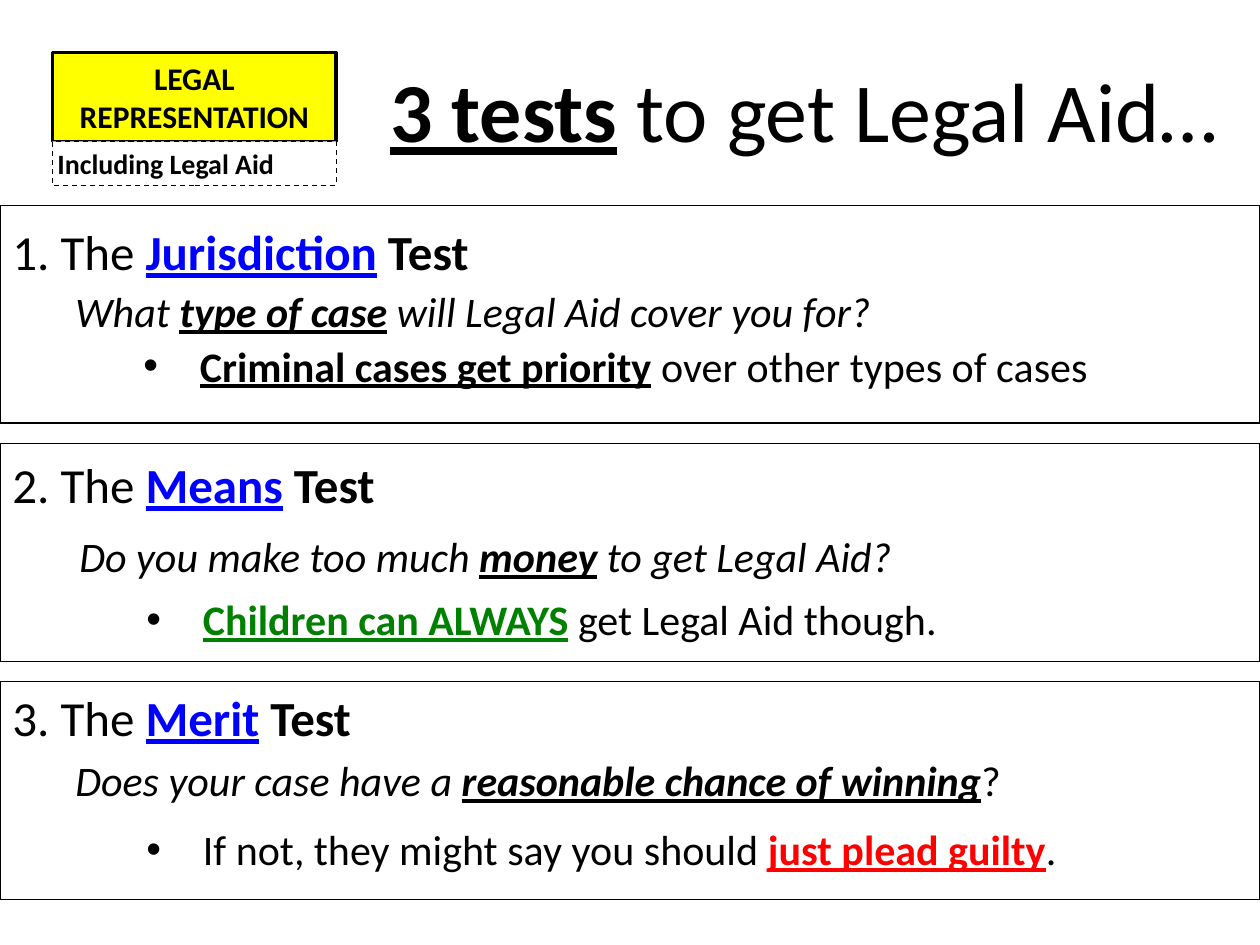
from lxml import etree
from pptx import Presentation
from pptx.dml.color import RGBColor
from pptx.enum import dml, shapes, text
from pptx.oxml.ns import qn
from pptx.util import Cm, Pt

BLACK, BLUE, GREEN, RED = "000000", "0000FF", "008000", "FF0000"
WIDE = 25.4

# Each test: heading word, then (left, top, runs) for question and answer.
# A run is (text, style letters, optional colour).
TESTS = [
    ("Jurisdiction",
     (1.27, 5.64, [("What ", "i"), ("type of case", "biu"), (" ", ""),
                   ("will Legal Aid cover you for?", "i")]),
     (2.64, 6.73, [(" ", ""), ("Criminal cases get priority", "bu"),
                   (" over other types of cases", "")])),
    ("Means",
     (1.35, 10.57, [("Do you make too much ", "i"), ("money", "biu"), (" ", ""),
                    ("to get Legal Aid?", "i")]),
     (2.7, 11.84, [(" ", ""), ("Children can ALWAYS", "bu", GREEN),
                   (" get Legal Aid though.", "")])),
    ("Merit",
     (1.27, 15.09, [("Does your case have a ", "i"),
                    ("reasonable chance of winning", "biu"), ("?", "")]),
     (2.7, 16.48, [(" If not, they might say you should ", ""),
                   ("just plead guilty", "bu", RED), (".", "")])),
]


def tint(code):
    return RGBColor.from_string(code)


def write(shape, runs, size, wrap=True, inset=None):
    """Fill the first paragraph of a shape with styled runs."""
    frame = shape.text_frame
    form = {"word_wrap": wrap, "vertical_anchor": text.MSO_ANCHOR.TOP}
    if inset is not None:
        for side in ("left", "right", "top", "bottom"):
            form["margin_" + side] = Cm(inset)
    for name, value in form.items():
        setattr(frame, name, value)
    para = frame.paragraphs[0]
    for words, style, *color in runs:
        run = para.add_run()
        run.text = words
        look = {"name": "Calibri", "size": Pt(size), "bold": "b" in style,
                "italic": "i" in style, "underline": "u" in style}
        for name, value in look.items():
            setattr(run.font, name, value)
        run.font.color.rgb = tint(color[0] if color else BLACK)
    return para


def label(slide, box, runs, size, wrap=True):
    shape = slide.shapes.add_textbox(*map(Cm, box))
    return write(shape, runs, size, wrap)


def bullet(para):
    props = para._p.get_or_add_pPr()
    props.set("marL", str(Cm(0.95)))
    props.set("indent", str(Cm(-0.95)))
    etree.SubElement(props, qn("a:buFont")).set("typeface", "Arial")
    etree.SubElement(props, qn("a:buChar")).set("char", "•")


def panel(slide, box, fill=None, width=0.75, dash=None):
    shape = slide.shapes.add_shape(shapes.MSO_SHAPE.RECTANGLE, *map(Cm, box))
    shape.shadow.inherit = False
    if fill:
        shape.fill.solid()
        shape.fill.fore_color.rgb = tint(fill)
    else:
        shape.fill.background()
    shape.line.color.rgb = tint(BLACK)
    shape.line.width = Pt(width)
    if dash:
        shape.line.dash_style = dash
    return shape


def header(slide):
    badge = panel(slide, (1.06, 1.06, 5.72, 1.79), "FFFF00", 2)
    para = write(badge, [("LEGAL REPRESENTATION", "b")], 18)
    para.alignment = text.PP_ALIGN.CENTER
    note = panel(slide, (1.06, 2.85, 5.72, 0.89), "FFFFFF",
                 dash=dml.MSO_LINE.DASH)
    para = write(note, [("Including Legal Aid", "b")], 16, inset=0.1)
    para.alignment = text.PP_ALIGN.LEFT
    label(slide, (7.62, 1.06, 17.75, 2.31),
          [("3 tests", "bu"), (" ", "b"), ("to get Legal Aid…", "")], 48, False)


def test(slide, row, word, ask, reply):
    """Draw one framed test: heading, question and bulleted answer."""
    panel(slide, (0, 4.14 + 4.8 * row, WIDE, 4.39))
    label(slide, (0, 4.34 + 4.7 * row, 11.5, 1.45),
          [(f"{row + 1}. The ", ""), (word, "bu", BLUE), (" Test", "b")], 28)
    left, top, runs = ask
    label(slide, (left, top, WIDE - left, 1.27), runs, 24)
    left, top, runs = reply
    bullet(label(slide, (left, top, 22.75, 1.27), runs, 24))


def main():
    deck = Presentation()
    deck.slide_width, deck.slide_height = Cm(WIDE), Cm(19.05)
    slide = deck.slides.add_slide(deck.slide_layouts[6])
    header(slide)
    for row, parts in enumerate(TESTS):
        test(slide, row, *parts)
    deck.save("out.pptx")


if __name__ == "__main__":
    main()
